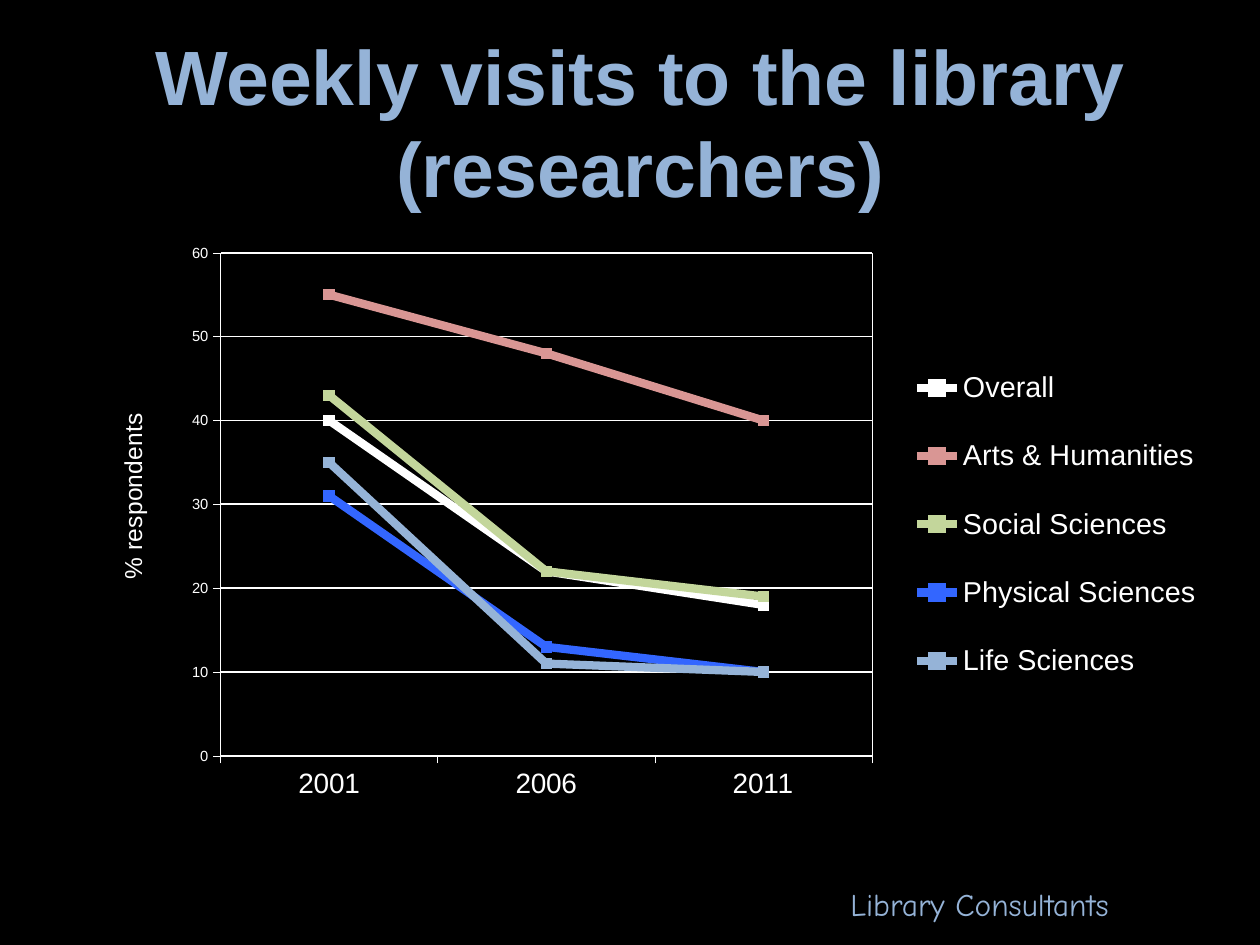
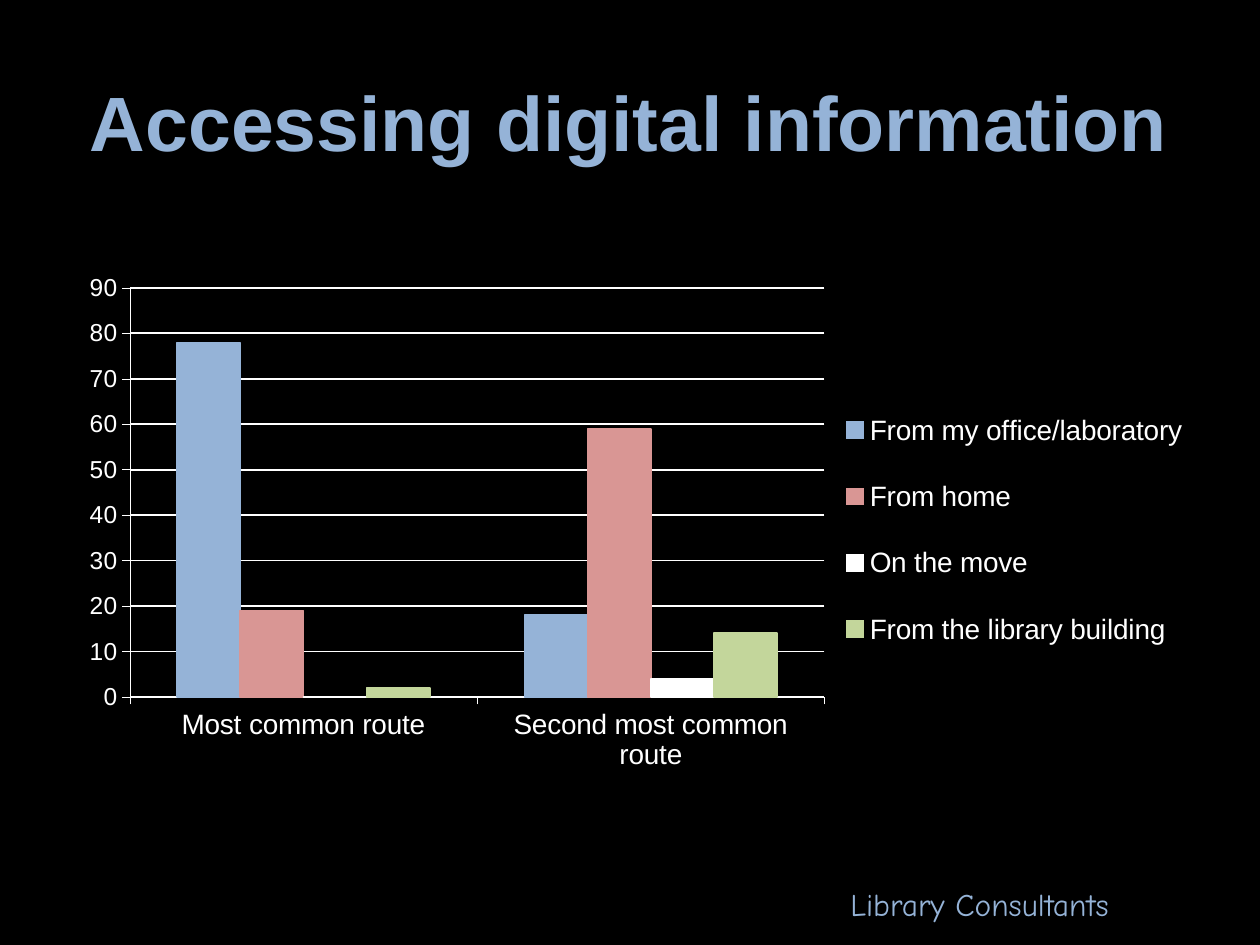
from pptx import Presentation
from pptx.chart.data import CategoryChartData
from pptx.dml.color import RGBColor
from pptx.enum.chart import (
    XL_CHART_TYPE as ChartType,
    XL_LEGEND_POSITION as LegendPosition,
    XL_MARKER_STYLE as MarkerStyle,
    XL_TICK_LABEL_POSITION as LabelPosition,
    XL_TICK_MARK as TickMark,
)
from pptx.enum.text import MSO_ANCHOR as Anchor, PP_ALIGN as Align
from pptx.oxml import parse_xml
from pptx.oxml.ns import nsdecls
from pptx.util import Emu, Pt

PX = 914400 / 126
BLACK, WHITE, SKY = "000000", "FFFFFF", "95B3D7"
ROSE, LEAF, COBALT = "D99694", "C3D69B", "3366FF"
FOOTER_BOX = (838, 879, 377, 50)
TITLE_TOP, TITLE_HEIGHT = 42, 157


def emu(*lengths):
    """Turn px lengths into EMU."""
    return [Emu(round(length * PX)) for length in lengths]


def color(value):
    """Turn a hex string into a colour."""
    return RGBColor.from_string(value)


def set_font(font, size, ink=WHITE, **extra):
    """Apply size, colour and any further values to a font."""
    values = {"name": "Arial", "size": Pt(size), "bold": False, **extra}
    for name, value in values.items():
        setattr(font, name, value)
    font.color.rgb = color(ink)


def set_line(line, width, ink=WHITE):
    """Give a line its width and colour."""
    line.width = Pt(width)
    line.color.rgb = color(ink)


def add_text(slide, box, text, align, anchor, **font_values):
    """Add a wrapped one-paragraph text box."""
    frame = slide.shapes.add_textbox(*emu(*box)).text_frame
    for name, value in {"word_wrap": True, "vertical_anchor": anchor}.items():
        setattr(frame, name, value)
    paragraph = frame.paragraphs[0]
    paragraph.alignment = align
    run = paragraph.add_run()
    run.text = text
    set_font(run.font, ink=SKY, **font_values)


def add_page(deck, title, title_left, title_width):
    """Add a black slide with its title and footer."""
    slide = deck.slides.add_slide(deck.slide_layouts[6])
    slide.background.fill.solid()
    slide.background.fill.fore_color.rgb = color(BLACK)
    add_text(slide, (title_left, TITLE_TOP, title_width, TITLE_HEIGHT), title,
             Align.CENTER, Anchor.MIDDLE, size=44, bold=True)
    add_text(slide, FOOTER_BOX, "Library Consultants",
             Align.LEFT, Anchor.TOP, size=18, name="Comic Neue")
    return slide


def place(part, index, chart_box, part_box, inner=False):
    """Fix a chart part at a box given in slide px."""
    left, top, width, height = chart_box
    x, y, w, h = part_box
    shares = {"x": (x - left) / width, "y": (y - top) / height,
              "w": w / width, "h": h / height}
    target = '<c:layoutTarget val="inner"/>' if inner else ""
    modes = "".join(f'<c:{axis}Mode val="edge"/>' for axis in "xy")
    sizes = "".join(f'<c:{name} val="{share:.3f}"/>' for name, share in shares.items())
    for layout in part.xpath("c:layout"):
        part.remove(layout)
    part.insert(index, parse_xml(
        f'<c:layout {nsdecls("c")}><c:manualLayout>{target}{modes}{sizes}'
        '</c:manualLayout></c:layout>'))


def style_axis(axis, size):
    """Style the line, ticks and labels of an axis."""
    axis.major_tick_mark = TickMark.OUTSIDE
    axis.minor_tick_mark = TickMark.NONE
    axis.tick_label_position = LabelPosition.LOW
    set_font(axis.tick_labels.font, size)
    set_line(axis.format.line, 0.25)


def add_chart(slide, kind, box, plot_box, legend_box, categories, series,
              top_value, value_size, legend_size):
    """Add a chart with white axes, gridlines and a right legend."""
    data = CategoryChartData()
    data.categories = categories
    for name, values, _ in series:
        data.add_series(name, values)
    chart = slide.shapes.add_chart(kind, *emu(*box), data).chart
    chart.has_title = False
    set_font(chart.font, 12)
    style_axis(chart.category_axis, 16)
    value_axis = chart.value_axis
    style_axis(value_axis, value_size)
    scale = {"minimum_scale": 0, "maximum_scale": top_value, "major_unit": 10,
             "has_major_gridlines": True}
    for name, value in scale.items():
        setattr(value_axis, name, value)
    set_line(value_axis.major_gridlines.format.line, 1)
    chart.has_legend = True
    chart.legend.position = LegendPosition.RIGHT
    chart.legend.include_in_layout = False
    set_font(chart.legend.font, legend_size)
    chart.plots[0].vary_by_categories = False
    place(chart.element.xpath("c:chart/c:plotArea")[0], 0, box, plot_box, inner=True)
    place(chart.element.xpath("c:chart/c:legend")[0], 1, box, legend_box)
    return chart


def style_trends(chart, inks):
    """Draw each series as a thick line with square markers."""
    for trend, ink in zip(chart.plots[0].series, inks):
        trend.smooth = False
        set_line(trend.format.line, 4.72, ink)
        trend.marker.style = MarkerStyle.SQUARE
        trend.marker.size = 6
        trend.marker.format.fill.solid()
        trend.marker.format.fill.fore_color.rgb = color(ink)
        set_line(trend.marker.format.line, 1, ink)


def style_columns(chart, inks):
    """Fill and outline the columns of each series."""
    chart.plots[0].gap_width = 150
    chart.plots[0].overlap = 0
    for column, ink in zip(chart.plots[0].series, inks):
        column.invert_if_negative = False
        column.format.fill.solid()
        column.format.fill.fore_color.rgb = color(ink)
        set_line(column.format.line, 1, ink)


def add_value_title(chart, text, chart_box, title_box):
    """Write a turned title beside the value axis."""
    title = chart.value_axis.axis_title
    title.text_frame.text = text
    set_font(title.text_frame.paragraphs[0].runs[0].font, 14)
    element = title.element
    for name, value in {"rot": "-5400000", "vert": "horz"}.items():
        element.xpath("c:tx/c:rich/a:bodyPr")[0].set(name, value)
    place(element, 1, chart_box, title_box)


def frame_plot(chart):
    """Draw a thin white frame around the plot area."""
    chart.element.xpath("c:chart/c:plotArea")[0].append(parse_xml(
        f'<c:spPr {nsdecls("c", "a")}><a:noFill/><a:ln w="3175"><a:solidFill>'
        f'<a:srgbClr val="{WHITE}"/></a:solidFill></a:ln></c:spPr>'))


def add_visits_slide(deck):
    """Build the slide on weekly library visits."""
    slide = add_page(deck, "Weekly visits to the library (researchers)", 84, 1113)
    visits = [
        ("Overall", (40, 22, 18), WHITE),
        ("Arts & Humanities", (55, 48, 40), ROSE),
        ("Social Sciences", (43, 22, 19), LEAF),
        ("Physical Sciences", (31, 13, 10), COBALT),
        ("Life Sciences", (35, 11, 10), SKY),
    ]
    box = (62, 237, 1149, 607)
    chart = add_chart(slide, ChartType.LINE_MARKERS, box, (220, 253, 651, 503),
                      (908, 336, 298, 377), ("2001", "2006", "2011"), visits,
                      top_value=60, value_size=8.4, legend_size=16.4)
    style_trends(chart, [ink for *_, ink in visits])
    add_value_title(chart, "% respondents", box, (113, 409, 25, 166))
    frame_plot(chart)


def add_access_slide(deck):
    """Build the slide on routes to digital information."""
    slide = add_page(deck, "Accessing digital information", 63, 1133)
    routes = [
        ("From my office/laboratory", (78, 18), SKY),
        ("From home", (19, 59), ROSE),
        ("On the move", (0, 4), WHITE),
        ("From the library building", (2, 14), LEAF),
    ]
    chart = add_chart(slide, ChartType.COLUMN_CLUSTERED, (63, 257, 1133, 562),
                      (130, 288, 695, 409), (838, 379, 353, 302),
                      ("Most common route", "Second most common route"), routes,
                      top_value=90, value_size=14, legend_size=16)
    style_columns(chart, [ink for *_, ink in routes])


def main():
    """Build and save the deck."""
    deck = Presentation()
    deck.slide_width, deck.slide_height = emu(1260, 945)
    add_visits_slide(deck)
    add_access_slide(deck)
    deck.save("out.pptx")


if __name__ == "__main__":
    main()
